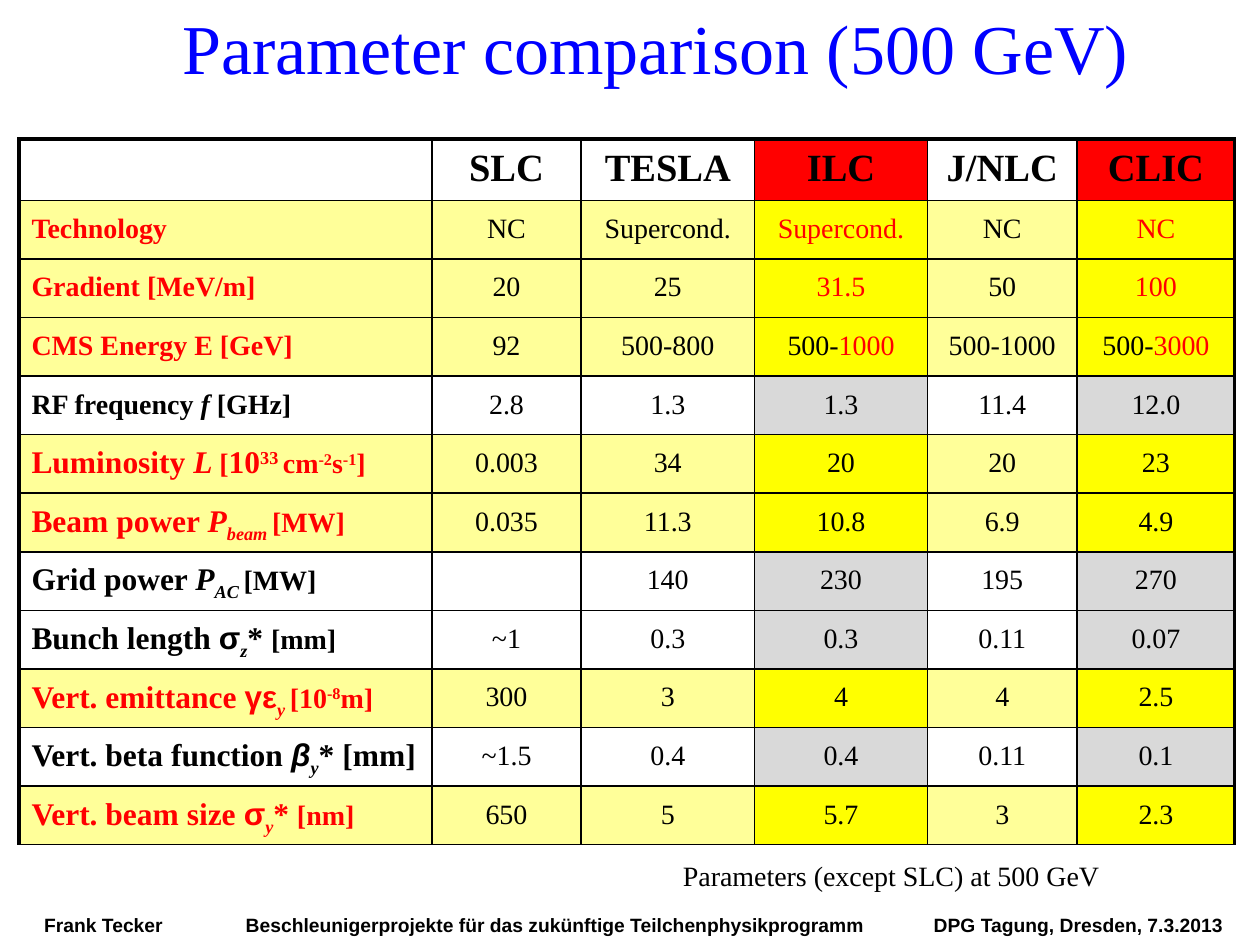
import pptx
import pptx.dml.color
import pptx.enum.text
import pptx.util
from lxml import etree

RGB = pptx.dml.color.RGBColor
BLACK = RGB(0, 0, 0)
RED = RGB(255, 0, 0)
BLUE = RGB(0, 0, 255)
YELLOW = RGB(255, 255, 0)
PALE_YELLOW = RGB(255, 255, 153)
GREY = RGB(217, 217, 217)
SERIF = "Times New Roman"
SANS = "Arial"
CENTER = pptx.enum.text.PP_ALIGN.CENTER
LEFT = pptx.enum.text.PP_ALIGN.LEFT
MIDDLE = pptx.enum.text.MSO_ANCHOR.MIDDLE
A = "http://schemas.openxmlformats.org/drawingml/2006/main"


def add_text(p, text, size=16, color=BLACK, font=SERIF, bold=False, italic=False, base=0):
    r = p.add_run()
    r.text = text
    r.font.size = pptx.util.Pt(size)
    r.font.name = font
    r.font.bold = bold
    r.font.italic = italic
    r.font.color.rgb = color
    if base:
        r.font._element.set("baseline", str(base * 1000))


def add_border(tc_pr, side, width):
    ln = etree.SubElement(tc_pr, f"{{{A}}}ln{side}", w=str(pptx.util.Pt(width)))
    fill = etree.SubElement(ln, f"{{{A}}}solidFill")
    etree.SubElement(fill, f"{{{A}}}srgbClr", val=str(BLACK))


prs = pptx.Presentation()
prs.slide_width = pptx.util.Inches(10)
prs.slide_height = pptx.util.Inches(7.5)
W, H = prs.slide_width, prs.slide_height
s = prs.slides.add_slide(prs.slide_layouts[6])

FOOTER = dict(size=11, font=SANS, bold=True)
boxes = [
    ("DPG Tagung, Dresden, 7.3.2013", 0.741, 0.969, 0.231, 0.023, FOOTER),
    ("Frank Tecker", 0.035, 0.969, 0.095, 0.023, FOOTER),
    ("Beschleunigerprojekte für das zukünftige Teilchenphysikprogramm",
     0.195, 0.968, 0.495, 0.023, FOOTER),
    ("Parameter comparison (500 GeV)", 0.136, 0.016, 0.768, 0.075, dict(size=40, color=BLUE)),
    ("Parameters (except SLC) at 500 GeV", 0.542, 0.911, 0.356, 0.034, dict(size=16)),
]
for text, x, y, w, h, style in boxes:
    sp = s.shapes.add_textbox(int(x * W), int(y * H), int(w * W), int(h * H))
    tf = sp.text_frame
    tf.margin_left = tf.margin_right = tf.margin_top = tf.margin_bottom = 0
    tf.word_wrap = style is not FOOTER
    tf.vertical_anchor = MIDDLE
    p = tf.paragraphs[0]
    p.line_spacing = 0.93
    p.alignment = CENTER if style.get("color") == BLUE else LEFT
    add_text(p, text, **style)

BIG = dict(size=18)
SMALL = dict(size=16)
VAR = dict(size=18, italic=True)
SUB = dict(size=18, italic=True, base=-25)
SUP = dict(size=16, base=30)
GREEK = dict(size=18, font=SANS)

headers = ["", "SLC", "TESLA", "ILC", "J/NLC", "CLIC"]
rows = [
    (True, [("Technology", SMALL)], ["NC", "Supercond.", "|Supercond.", "NC", "|NC"]),
    (True, [("Gradient [MeV/m]", SMALL)], ["20", "25", "|31.5", "50", "|100"]),
    (True, [("CMS Energy E [GeV]", SMALL)],
     ["92", "500-800", "500-|1000", "500-1000", "500-|3000"]),
    (False, [("RF frequency ", SMALL), ("f", dict(size=16, italic=True)), (" [GHz]", SMALL)],
     ["2.8", "1.3", "1.3", "11.4", "12.0"]),
    (True, [("Luminosity ", BIG), ("L ", VAR), ("[", SMALL), ("10", BIG),
            ("33 ", dict(size=18, base=30)), ("cm", SMALL), ("-2", SUP), ("s", SMALL),
            ("-1", SUP), ("]", SMALL)],
     ["0.003", "34", "20", "20", "23"]),
    (True, [("Beam power ", BIG), ("P", VAR), ("beam ", SUB), ("[MW]", SMALL)],
     ["0.035", "11.3", "10.8", "6.9", "4.9"]),
    (False, [("Grid power ", BIG), ("P", VAR), ("AC ", SUB), ("[MW]", SMALL)],
     ["", "140", "230", "195", "270"]),
    (False, [("Bunch length ", BIG), ("σ", GREEK), ("z", SUB), ("* ", BIG), ("[mm]", SMALL)],
     ["~1", "0.3", "0.3", "0.11", "0.07"]),
    (True, [("Vert. emittance ", BIG), ("γε", GREEK), ("y ", SUB), ("[10", SMALL),
            ("-8", SUP), ("m]", SMALL)],
     ["300", "3", "4", "4", "2.5"]),
    (False, [("Vert. beta function ", BIG), ("β", dict(size=18, font=SANS, italic=True)),
             ("y", SUB), ("* [mm]", BIG)],
     ["~1.5", "0.4", "0.4", "0.11", "0.1"]),
    (True, [("Vert. beam size ", BIG), ("σ", GREEK), ("y", SUB), ("* ", BIG), ("[nm]", SMALL)],
     ["650", "5", "5.7", "3", "2.3"]),
]

col_shares = [0.328, 0.118, 0.138, 0.137, 0.119, 0.125]
header_share, row_share = 0.065, 0.062
n_rows, n_cols = len(rows) + 1, len(headers)
frame = s.shapes.add_table(n_rows, n_cols, int(0.015 * W), int(0.147 * H),
                           int(sum(col_shares) * W),
                           int((header_share + row_share * len(rows)) * H))
table = frame.table
table.first_row = table.horz_banding = False
for column, share in zip(table.columns, col_shares):
    column.width = int(share * W)

for i, row in enumerate(table.rows):
    row.height = int((row_share if i else header_share) * H)
    for j, cell in enumerate(row.cells):
        featured = headers[j] in ("ILC", "CLIC")
        if i == 0:
            fill = RED if featured else None
            runs = [(headers[j], dict(size=22, bold=True))]
        else:
            key_row, label, values = rows[i - 1]
            if key_row:
                fill = YELLOW if featured else PALE_YELLOW
            else:
                fill = GREY if featured else None
            if j == 0:
                color = RED if key_row else BLACK
                runs = [(text, dict(style, bold=True, color=color)) for text, style in label]
            else:
                black, _, red = values[j - 1].partition("|")
                runs = [(black, {}), (red, dict(color=RED))]

        cell.vertical_anchor = MIDDLE
        p = cell.text_frame.paragraphs[0]
        p.alignment = LEFT if i and j == 0 else CENTER
        p.line_spacing = 0.93
        p.space_after = pptx.util.Pt(14.2)
        for text, style in runs:
            if text:
                add_text(p, text, **style)

        tc_pr = cell._tc.get_or_add_tcPr()
        outer = {"L": j == 0, "R": j == n_cols - 1, "T": i == 0, "B": False}
        for side, is_outer in outer.items():
            add_border(tc_pr, side, 2.25 if is_outer else 1)
        if fill is None:
            cell.fill.background()
        else:
            cell.fill.solid()
            cell.fill.fore_color.rgb = fill

prs.save("out.pptx")
